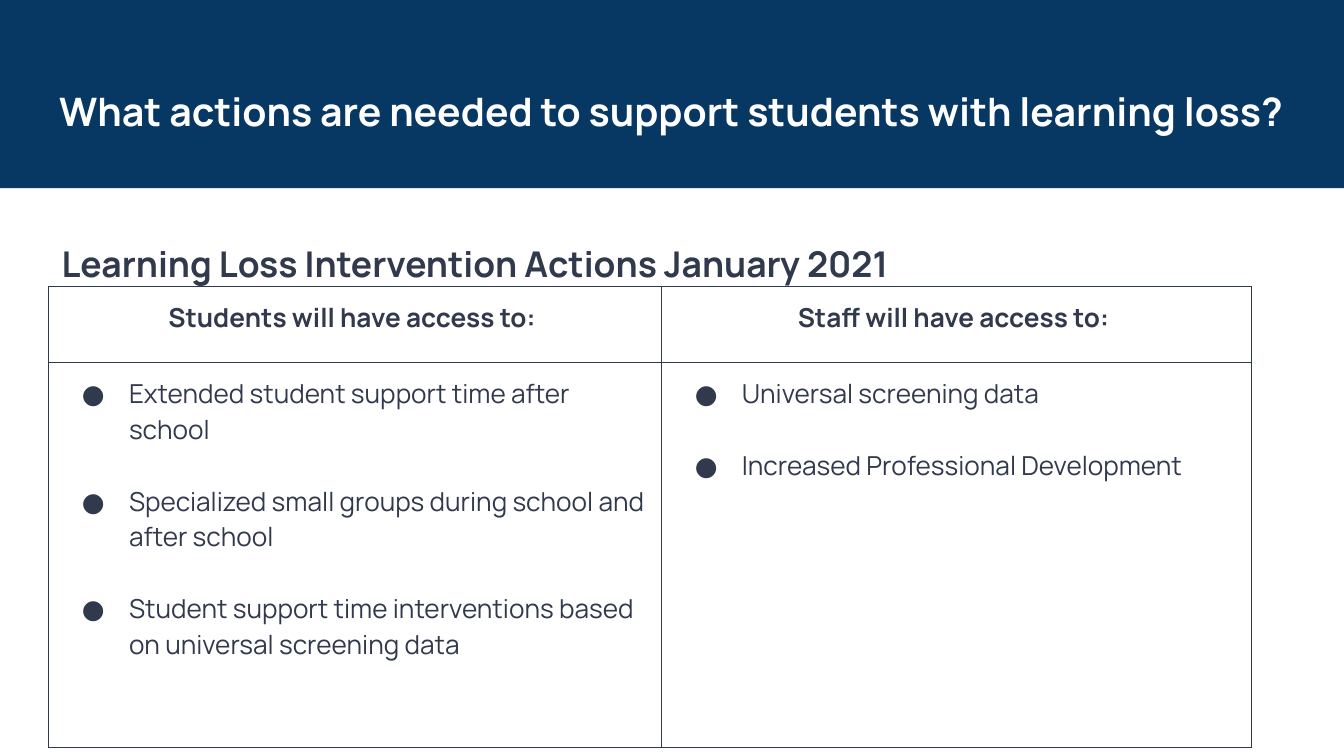
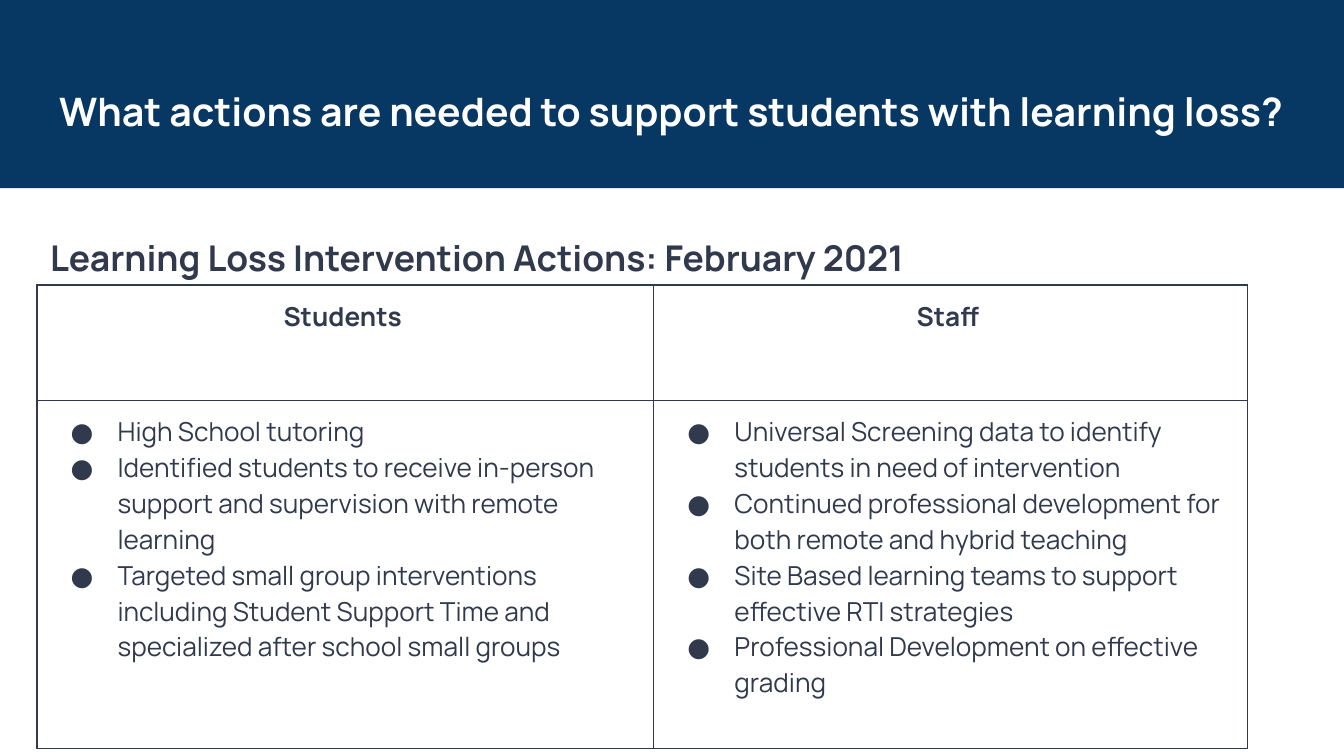
"""Build two slides of learning loss actions for students and staff."""
from lxml import etree
from pptx import Presentation
from pptx import util as u
from pptx.dml.color import RGBColor
from pptx.enum import shapes, text
from pptx.oxml import ns

NAVY = RGBColor(0x07, 0x37, 0x63)
SLATE = RGBColor(0x31, 0x39, 0x4D)
WHITE = RGBColor(0xFF, 0xFF, 0xFF)
FONT = "Manrope"
COLUMNS, ROWS = 100, 56.25
HEADING = "What actions are needed to support students with learning loss?"

ACTIONS = [
    dict(
        caption="Learning Loss Intervention Actions January 2021",
        caption_place=(3.6, 15.4, 94.9, 9.7),
        corner=(3.6, 21.3),
        widths=(45.6, 43.9),
        heights=[5.65] + [5.73] * 5,
        gap=19.2,
        headers=("Students will have access to: ", "Staff will have access to: "),
        lists=(
            ["Extended student support time after school",
             "Specialized small groups during school and after school",
             "Student support time interventions based on universal screening data"],
            ["Universal screening data",
             "Increased Professional Development"],
        ),
    ),
    dict(
        caption="Learning Loss Intervention Actions: February 2021",
        caption_place=(2.75, 15, 93.3, 10),
        corner=(2.75, 21.2),
        widths=(45.9, 44.15),
        heights=[8.6] + [8.64] * 3,
        gap=0,
        headers=("Students ", "Staff "),
        lists=(
            ["High School tutoring",
             "Identified students to receive in-person support and supervision "
             "with remote learning",
             "Targeted small group interventions including Student Support Time "
             "and specialized after school small groups"],
            ["Universal Screening data to identify students in need of intervention",
             "Continued professional development for both remote and hybrid teaching",
             "Site Based learning teams to support effective RTI strategies",
             "Professional Development on effective grading"],
        ),
    ),
]


class ActionDeck:
    """Hold the deck's style and its current slide."""

    def __init__(self):
        self.deck = Presentation()
        self.deck.slide_width = u.Inches(10)
        self.deck.slide_height = self.deck.slide_width * 9 // 16
        self.layout = self.deck.slide_layouts[5]
        self.page = None

    def across(self, columns):
        return round(self.deck.slide_width * columns / COLUMNS)

    def down(self, rows):
        return round(self.deck.slide_height * rows / ROWS)

    def place(self, left, top, width, height):
        return self.across(left), self.down(top), self.across(width), self.down(height)

    def style(self, paragraph, size, color, bold=False):
        font = paragraph.font
        font.name, font.size, font.bold = FONT, u.Pt(size), bold
        font.color.rgb = color

    def frame(self, box):
        frame = box.text_frame
        frame.word_wrap = True
        frame.auto_size = text.MSO_AUTO_SIZE.NONE
        frame.vertical_anchor = text.MSO_ANCHOR.TOP
        frame.margin_left = frame.margin_right = u.Inches(0.1)
        frame.margin_top = frame.margin_bottom = u.Inches(0.1)
        return frame

    def add_page(self):
        self.page = self.deck.slides.add_slide(self.layout)

    def add_band(self):
        band = self.page.shapes.add_shape(
            shapes.MSO_SHAPE.RECTANGLE, *self.place(0, 0, COLUMNS, 14))
        band.shadow.inherit = False
        band.fill.solid()
        band.fill.fore_color.rgb = NAVY
        band.line.fill.background()
        self.layout.shapes.element.insert(2, band.element)

    def add_title(self, words):
        title = self.page.shapes.title
        title.left, title.top, title.width, title.height = self.place(3.4, 5.5, 93.2, 6.8)
        paragraph = self.frame(title).paragraphs[0]
        paragraph.text = words
        paragraph.alignment = text.PP_ALIGN.LEFT
        self.style(paragraph, 21, WHITE, bold=True)

    def add_caption(self, words, place):
        box = self.page.shapes.add_textbox(*self.place(*place))
        paragraph = self.frame(box).paragraphs[0]
        paragraph.text = words
        paragraph.line_spacing = 1.5
        self.style(paragraph, 19, SLATE, bold=True)

    def add_bullet(self, paragraph, size):
        props = paragraph._p.get_or_add_pPr()
        props.set("marL", str(u.Inches(0.5)))
        props.set("indent", str(u.Inches(-0.35)))
        tint = etree.SubElement(props, ns.qn("a:buClr"))
        etree.SubElement(tint, ns.qn("a:srgbClr"), val=str(SLATE))
        etree.SubElement(props, ns.qn("a:buSzPts"), val=str(size * 100))
        etree.SubElement(props, ns.qn("a:buFont"), typeface=FONT)
        etree.SubElement(props, ns.qn("a:buChar"), char="●")

    def outline(self, cell):
        props = cell._tc.get_or_add_tcPr()
        for side in ("a:lnL", "a:lnR", "a:lnT", "a:lnB"):
            line = etree.SubElement(props, ns.qn(side), w=str(u.Pt(0.75)))
            fill = etree.SubElement(line, ns.qn("a:solidFill"))
            etree.SubElement(fill, ns.qn("a:srgbClr"), val=str(SLATE))
        cell.fill.background()
        cell.margin_left = cell.margin_right = u.Inches(0.1)
        cell.margin_top = cell.margin_bottom = u.Inches(0.1)

    def fill_list(self, cell, items, gap, size=14):
        frame = cell.text_frame
        for index, item in enumerate(items):
            paragraph = frame.add_paragraph() if index else frame.paragraphs[0]
            paragraph.text = item
            self.add_bullet(paragraph, size)
            if index:
                paragraph.space_before = u.Pt(gap)
            self.style(paragraph, size, SLATE)

    def add_table(self, corner, widths, heights, headers, lists, gap):
        place = self.place(*corner, sum(widths), sum(heights))
        table = self.page.shapes.add_table(len(heights), len(widths), *place).table
        table.first_row = table.horz_banding = False
        for row, height in zip(table.rows, heights):
            row.height = self.down(height)
        for cell in table.iter_cells():
            self.outline(cell)
        for index, (width, header, items) in enumerate(zip(widths, headers, lists)):
            table.columns[index].width = self.across(width)
            paragraph = table.cell(0, index).text_frame.paragraphs[0]
            paragraph.text = header
            paragraph.alignment = text.PP_ALIGN.CENTER
            self.style(paragraph, 14, SLATE, bold=True)
            body = table.cell(1, index)
            body.merge(table.cell(len(heights) - 1, index))
            self.fill_list(body, items, gap)


def main():
    show = ActionDeck()
    for actions in ACTIONS:
        show.add_page()
        if len(show.deck.slides) == 1:
            show.add_band()
        show.add_title(HEADING)
        show.add_table(actions["corner"], actions["widths"], actions["heights"],
                       actions["headers"], actions["lists"], actions["gap"])
        show.add_caption(actions["caption"], actions["caption_place"])
    show.deck.save("out.pptx")


if __name__ == "__main__":
    main()
